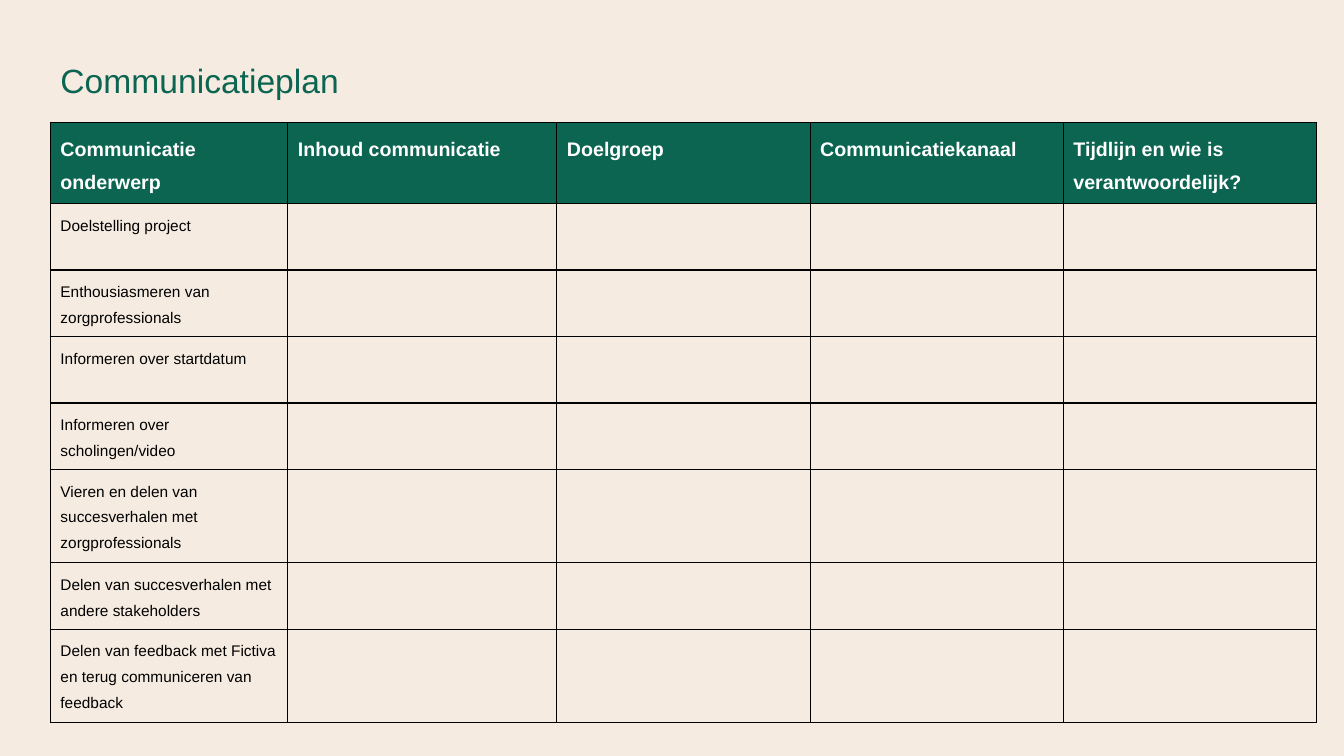
import dataclasses

import pptx
import pptx.dml.color
import pptx.enum.text
import pptx.oxml
import pptx.oxml.ns
import pptx.util

Pt = pptx.util.Pt


@dataclasses.dataclass(frozen=True)
class Theme:
    font: str = "Arial"
    green: str = "0B6551"
    sand: str = "F5EBE1"
    white: str = "FFFFFF"
    black: str = "000000"
    title_size: int = 24
    header_size: int = 14
    body_size: int = 11
    border_width: int = 1
    line_spacing: float = 1.5


@dataclasses.dataclass(frozen=True)
class Column:
    heading: str
    width: float


@dataclasses.dataclass(frozen=True)
class Topic:
    label: str
    height: float = 47.5


THEME = Theme()
HEADER_HEIGHT = 47.5
COLUMNS = [
    Column("Communicatie onderwerp", 169.6),
    Column("Inhoud communicatie", 192.2),
    Column("Doelgroep", 180.9),
    Column("Communicatiekanaal", 180.9),
    Column("Tijdlijn en wie is verantwoordelijk?", 180.9),
]
TOPICS = [
    Topic("Doelstelling project"),
    Topic("Enthousiasmeren van zorgprofessionals"),
    Topic("Informeren over startdatum"),
    Topic("Informeren over scholingen/video"),
    Topic("Vieren en delen van succesverhalen met zorgprofessionals", 51.1),
    Topic("Delen van succesverhalen met andere stakeholders"),
    Topic("Delen van feedback met Fictiva en terug communiceren van feedback"),
]


def rgb(color: str) -> pptx.dml.color.RGBColor:
    return pptx.dml.color.RGBColor.from_string(color)


def write_text(frame, text: str, *, size: float, color: str,
               bold: bool = False, spacing: float = 1.0) -> None:
    """Write one left-aligned paragraph into a text frame."""
    para = frame.paragraphs[0]
    para.alignment = pptx.enum.text.PP_ALIGN.LEFT
    para.line_spacing = spacing
    span = para.add_run()
    span.text = text
    span.font.name = THEME.font
    span.font.size = Pt(size)
    span.font.bold = bold
    span.font.color.rgb = rgb(color)


def format_cell(cell, fill: str) -> None:
    """Draw the four borders, then fill the cell."""
    properties = cell._tc.get_or_add_tcPr()
    for side in ("lnL", "lnR", "lnT", "lnB"):
        properties.append(pptx.oxml.parse_xml(
            f'<a:{side} {pptx.oxml.ns.nsdecls("a")} w="{Pt(THEME.border_width)}">'
            f'<a:solidFill><a:srgbClr val="{THEME.black}"/></a:solidFill>'
            f'</a:{side}>'))
    cell.fill.solid()
    cell.fill.fore_color.rgb = rgb(fill)


def add_title(page, text: str) -> None:
    box = page.shapes.title
    box.left, box.top, box.width, box.height = Pt(36), Pt(39), Pt(803.5), Pt(36)
    frame = box.text_frame
    frame.word_wrap = True
    frame.auto_size = pptx.enum.text.MSO_AUTO_SIZE.SHAPE_TO_FIT_TEXT
    frame.vertical_anchor = pptx.enum.text.MSO_ANCHOR.TOP
    write_text(frame, text, size=THEME.title_size, color=THEME.green)


def add_plan(page, columns: list[Column], topics: list[Topic]) -> None:
    heights = [HEADER_HEIGHT] + [topic.height for topic in topics]
    table = page.shapes.add_table(
        len(heights), len(columns), Pt(36), Pt(87.8),
        Pt(sum(column.width for column in columns)), Pt(sum(heights))).table
    table.horz_banding = False
    for row, height in zip(table.rows, heights):
        row.height = Pt(height)

    # Header row
    for index, column in enumerate(columns):
        table.columns[index].width = Pt(column.width)
        cell = table.cell(0, index)
        format_cell(cell, THEME.green)
        write_text(cell.text_frame, column.heading, size=THEME.header_size,
                   color=THEME.white, bold=True, spacing=THEME.line_spacing)

    # Topic rows, with the other columns left open
    for number, topic in enumerate(topics, start=1):
        for index in range(len(columns)):
            format_cell(table.cell(number, index), THEME.sand)
        write_text(table.cell(number, 0).text_frame, topic.label,
                   size=THEME.body_size, color=THEME.black,
                   spacing=THEME.line_spacing)


def main() -> None:
    deck = pptx.Presentation()
    deck.slide_width, deck.slide_height = Pt(960), Pt(540)
    page = deck.slides.add_slide(deck.slide_layouts[5])
    page.background.fill.solid()
    page.background.fill.fore_color.rgb = rgb(THEME.sand)
    add_title(page, "Communicatieplan")
    add_plan(page, COLUMNS, TOPICS)
    deck.save("out.pptx")


if __name__ == "__main__":
    main()
